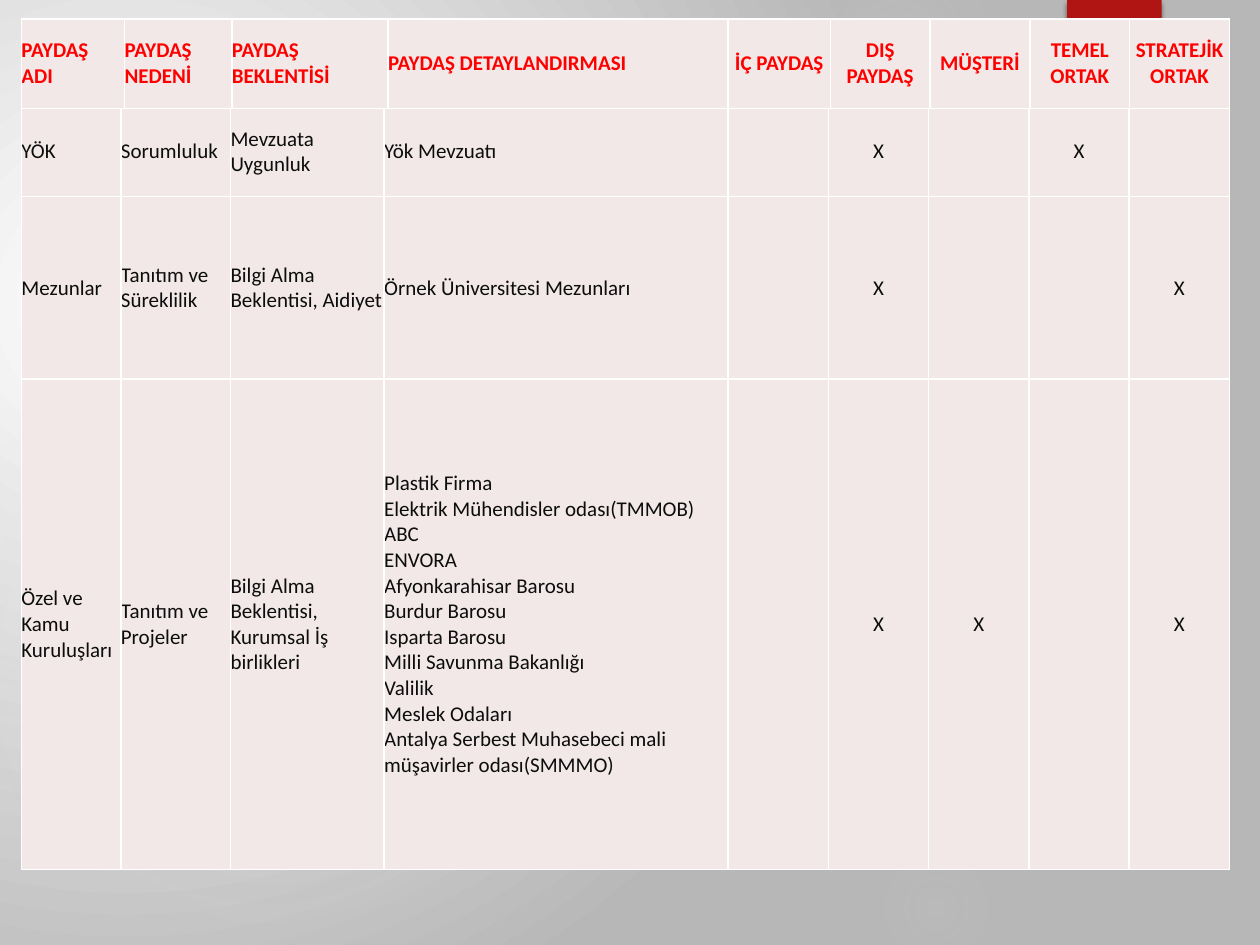
"""Build a stakeholder analysis slide with a header table and a body table."""
from dataclasses import dataclass

from lxml import etree
from pptx import Presentation
from pptx.dml.color import RGBColor
from pptx.enum import shapes, text
from pptx.oxml import ns
from pptx.util import Inches, Pt


@dataclass(frozen=True)
class Theme:
    font: str = "Calibri"
    size: int = 12
    border: int = 1
    header: str = "FF0000"
    body: str = "0C0D0D"
    cell: str = "F2E8E7"
    line: str = "FFFFFF"
    accent: str = "B01513"
    shadow: str = "000000"
    glow: str = "D9D9D9"
    bg_inner: str = "FFFFFF"
    bg_outer: str = "B7B7B7"


@dataclass(frozen=True)
class Stop:
    position: int
    color: str
    alpha: int = 100


@dataclass(frozen=True)
class Glow:
    left: float
    top: float
    size: float
    alphas: tuple[int, int]
    fade: int


@dataclass(frozen=True)
class Grid:
    top: float
    lead_widths: tuple[float, ...]
    heights: tuple[float, ...]
    rows: tuple[tuple[str, ...], ...]
    color: str
    bold: bool


THEME = Theme()
LEFT, WIDTH, COLUMNS, TEXT_COLUMNS = 0.17, 9.59, 9, 4
GLOWS = (
    Glow(6.89, 1.83, 3.08, (7, 6), 69),
    Glow(6.22, -0.5, 1.75, (14, 7), 73),
    Glow(6.89, 6.67, 1.08, (9, 5), 66),
    Glow(-0.17, 2.92, 4.58, (11, 10), 75),
    Glow(-0.92, 3.17, 2.58, (8, 8), 72),
)
DETAILS = "\v".join((
    "Plastik Firma", "Elektrik Mühendisler odası(TMMOB)", "ABC", "ENVORA",
    "Afyonkarahisar Barosu", "Burdur Barosu", "Isparta Barosu",
    "Milli Savunma Bakanlığı", "Valilik", "Meslek Odaları",
    "Antalya Serbest Muhasebeci mali müşavirler odası(SMMMO)",
))
BODY = Grid(0.85, (0.79, 0.87, 1.22, 2.73), (0.71, 1.45, 3.89), (
    ("YÖK", "Sorumluluk", "Mevzuata Uygunluk", "Yök Mevzuatı",
     "", "X", "", "X", ""),
    ("Mezunlar", "Tanıtım ve Süreklilik", "Bilgi Alma Beklentisi, Aidiyet",
     "Örnek Üniversitesi Mezunları", "", "X", "", "", "X"),
    ("Özel ve Kamu Kuruluşları", "Tanıtım ve Projeler",
     "Bilgi Alma Beklentisi, Kurumsal İş birlikleri", DETAILS,
     "", "X", "X", "", "X"),
), THEME.body, False)
HEADER = Grid(0.15, (0.82, 0.85, 1.24, 2.7, 0.81), (0.71,), (
    ("PAYDAŞ ADI", "PAYDAŞ NEDENİ", "PAYDAŞ BEKLENTİSİ",
     "PAYDAŞ DETAYLANDIRMASI", "İÇ PAYDAŞ", "DIŞ PAYDAŞ", "MÜŞTERİ",
     "TEMEL ORTAK", "STRATEJİK ORTAK"),
), THEME.header, True)


def add_node(parent, tag: str, **attrs):
    """Append a DrawingML element whose attributes are given by name."""
    return etree.SubElement(parent, ns.qn(tag), {k: str(v) for k, v in attrs.items()})


def add_color(parent, color: str, alpha: int = 100) -> None:
    """Append a colour with its opacity in percent."""
    node = add_node(parent, "a:srgbClr", val=color)
    if alpha < 100:
        add_node(node, "a:alpha", val=alpha * 1000)


def set_radial(owner, fill, stops: tuple[Stop, ...], focus: tuple[int, ...]) -> None:
    """Give the owner's fill a circular gradient."""
    fill.gradient()
    grad = owner.element.find(".//" + ns.qn("a:gradFill"))
    for child in list(grad):
        grad.remove(child)
    stop_list = add_node(grad, "a:gsLst")
    for stop in stops:
        add_color(add_node(stop_list, "a:gs", pos=stop.position * 1000), stop.color, stop.alpha)
    circle = add_node(grad, "a:path", path="circle")
    add_node(circle, "a:fillToRect", **{k: v * 1000 for k, v in zip("ltrb", focus)})


def add_plain_shape(s, kind, left: float, top: float, width: float, height: float):
    """Add a preset shape without line or shadow."""
    sp = s.shapes.add_shape(kind, Inches(left), Inches(top), Inches(width), Inches(height))
    sp.line.fill.background()
    sp.shadow.inherit = False
    return sp


def add_glow(s, glow: Glow) -> None:
    """Add a soft circle that fades to nothing."""
    sp = add_plain_shape(s, shapes.MSO_SHAPE.OVAL, glow.left, glow.top, glow.size, glow.size)
    positions = (0, 36, glow.fade)
    stops = tuple(Stop(p, THEME.glow, a) for p, a in zip(positions, (*glow.alphas, 0)))
    set_radial(sp, sp.fill, stops, (50, 50, 50, 50))


def add_ribbon(s) -> None:
    """Add the accent ribbon at the top edge."""
    sp = add_plain_shape(s, shapes.MSO_SHAPE.RECTANGLE, 8.47, 0, 0.75, 1.2)
    sp.fill.solid()
    sp.fill.fore_color.rgb = RGBColor.from_string(THEME.accent)
    effects = sp.element.spPr.find(ns.qn("a:effectLst"))
    shadow = add_node(effects, "a:outerShdw", blurRad=Pt(3), dist=Pt(2), dir=90 * 60000)
    add_color(shadow, THEME.shadow, 45)


def format_cell(cell, content: str, grid: Grid, centred: bool) -> None:
    """Write a cell and set its borders, fill and type."""
    cell.text = content
    cell.margin_left = cell.margin_top = cell.margin_right = cell.margin_bottom = 0
    cell.vertical_anchor = text.MSO_ANCHOR.MIDDLE
    props = cell._tc.get_or_add_tcPr()
    for side in "LRTB":
        line = add_node(props, f"a:ln{side}", w=Pt(THEME.border))
        add_color(add_node(line, "a:solidFill"), THEME.line)
    cell.fill.solid()
    cell.fill.fore_color.rgb = RGBColor.from_string(THEME.cell)
    p = cell.text_frame.paragraphs[0]
    p.alignment = text.PP_ALIGN.CENTER if centred else text.PP_ALIGN.LEFT
    p.font.name, p.font.size, p.font.bold = THEME.font, Pt(THEME.size), grid.bold
    p.font.color.rgb = RGBColor.from_string(grid.color)


def add_grid(s, grid: Grid) -> None:
    """Add a table whose remaining columns share the leftover width."""
    frame = s.shapes.add_table(len(grid.rows), COLUMNS, Inches(LEFT), Inches(grid.top),
                               Inches(WIDTH), Inches(sum(grid.heights)))
    table = frame.table
    table.first_row = table.horz_banding = False
    rest = COLUMNS - len(grid.lead_widths)
    shared = (WIDTH - sum(grid.lead_widths)) / rest
    for column, width in zip(table.columns, (*grid.lead_widths, *[shared] * rest)):
        column.width = Inches(width)
    for row, height, contents in zip(table.rows, grid.heights, grid.rows):
        row.height = Inches(height)
        for i, (cell, content) in enumerate(zip(row.cells, contents)):
            format_cell(cell, content, grid, i >= TEXT_COLUMNS)


def main() -> None:
    """Build and save the slide."""
    prs = Presentation()
    prs.slide_width, prs.slide_height = Inches(10), Inches(7.5)
    s = prs.slides.add_slide(prs.slide_layouts[6])
    set_radial(s, s.background.fill,
               (Stop(0, THEME.bg_inner), Stop(100, THEME.bg_outer)), (45, 65, 125, 100))
    for glow in GLOWS:
        add_glow(s, glow)
    add_ribbon(s)
    for grid in (BODY, HEADER):
        add_grid(s, grid)
    prs.save("out.pptx")


if __name__ == "__main__":
    main()
